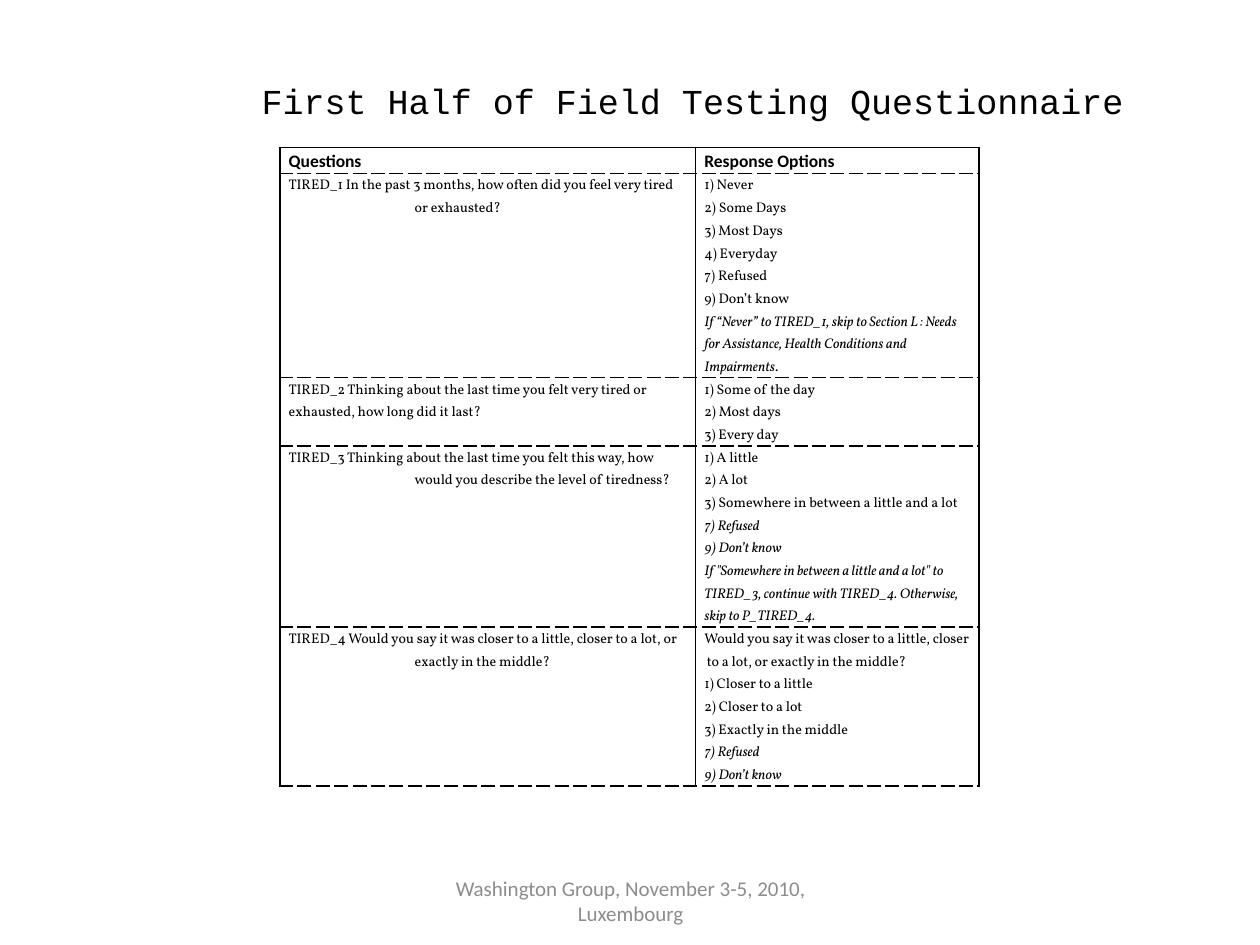
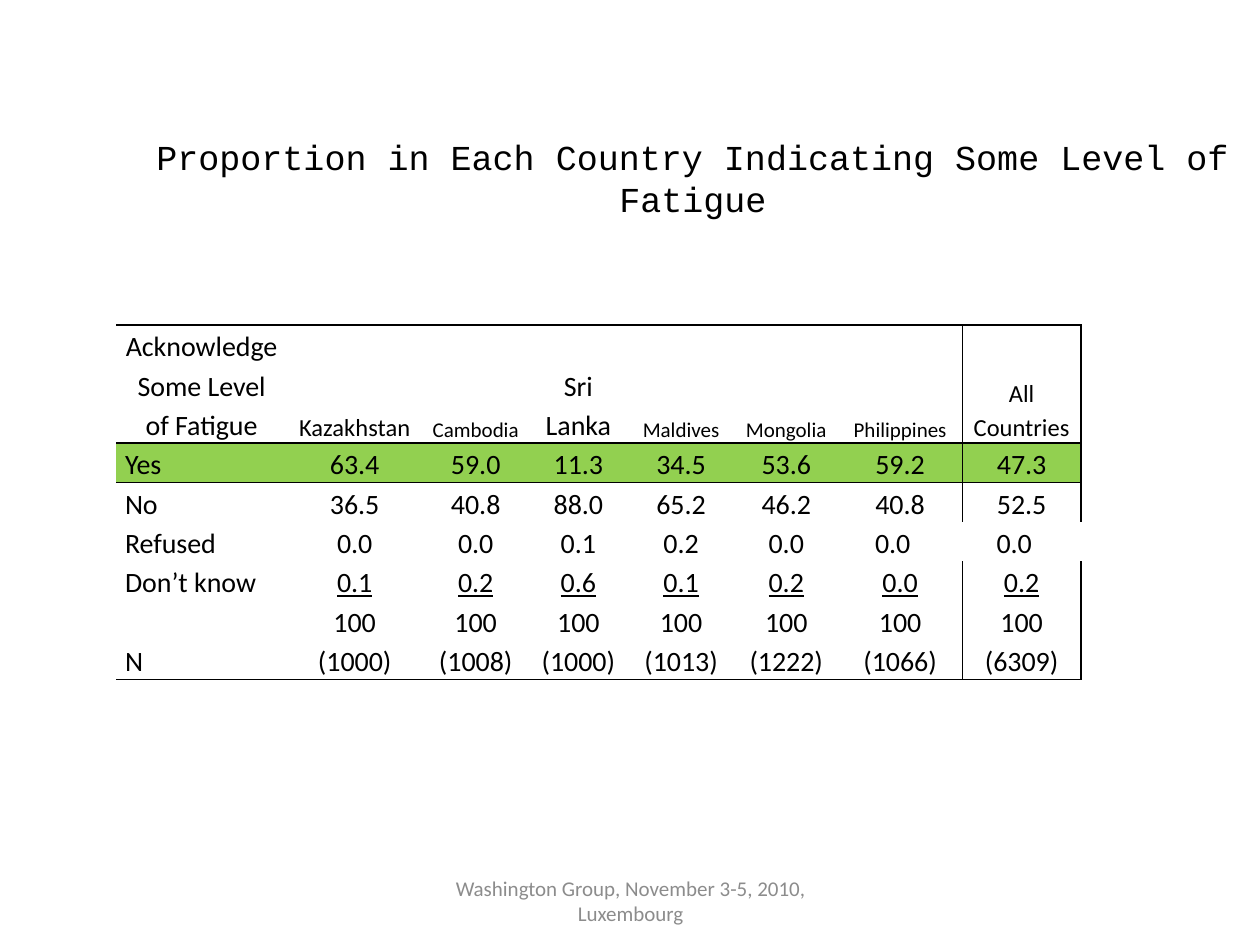
"""Build two slides on the fatigue questions: the questionnaire and the results by country."""
from lxml import etree
from pptx import Presentation
from pptx.dml.color import RGBColor
from pptx.enum.text import MSO_ANCHOR, MSO_AUTO_SIZE, PP_ALIGN
from pptx.oxml.ns import qn
from pptx.util import Cm, Pt

TOP, MIDDLE, BOTTOM = MSO_ANCHOR.TOP, MSO_ANCHOR.MIDDLE, MSO_ANCHOR.BOTTOM
LEFT, CENTER = PP_ALIGN.LEFT, PP_ALIGN.CENTER
NO_AUTOFIT = MSO_AUTO_SIZE.NONE

BLACK, GREY, GREEN = "000000", "8C8C8C", "92D050"
BODY_FONT, TITLE_FONT, QUESTION_FONT = "Calibri", "Courier New", "Vollkorn"
PLAIN_TABLE_STYLE = "{2D5ABB26-0587-4C30-8999-92F81FD0307C}"
FOOTER = "Washington Group, November 3-5, 2010, Luxembourg"


def add_table_slide(heading, heading_top, heading_inset, left, top, widths, heights):
    slide = prs.slides.add_slide(prs.slide_layouts[5])
    title = slide.shapes.title
    title.left, title.top, title.width, title.height = Cm(2.54), Cm(heading_top), Cm(22.86), Cm(3.18)
    footer = slide.shapes.add_textbox(Cm(8.69), Cm(17.65), Cm(8.05), Cm(1.02))
    for box, text, font_name, size, colour, anchor in (
        (title, heading, TITLE_FONT, 20, BLACK, TOP),
        (footer, FOOTER, BODY_FONT, 12, GREY, MIDDLE),
    ):
        frame = box.text_frame
        frame.text = text
        frame.word_wrap = True
        frame.auto_size = NO_AUTOFIT
        frame.vertical_anchor = anchor
        paragraph = frame.paragraphs[0]
        paragraph.alignment = CENTER
        paragraph.font.name, paragraph.font.size = font_name, Pt(size)
        paragraph.font.color.rgb = RGBColor.from_string(colour)
    title.text_frame.margin_top = Cm(heading_inset)

    graphic = slide.shapes.add_table(len(heights), len(widths), Cm(left), Cm(top),
                                     Cm(sum(widths)), Cm(sum(heights)))
    table = graphic.table
    table.first_row = table.horz_banding = False
    next(graphic.element.iter(qn("a:tableStyleId"))).text = PLAIN_TABLE_STYLE
    for column, width in zip(table.columns, widths):
        column.width = Cm(width)
    for row, height in zip(table.rows, heights):
        row.height = Cm(height)
    return table


def format_cell(cell, borders, dashed="", fill=None, anchor=TOP):
    cell.margin_left = cell.margin_right = Cm(0.18)
    cell.margin_top = cell.margin_bottom = 0
    cell.vertical_anchor = anchor
    properties = cell._tc.get_or_add_tcPr()
    for side in "LRTB":
        if side in borders:
            line = etree.SubElement(properties, qn(f"a:ln{side}"), w=str(Pt(1)))
            solid = etree.SubElement(line, qn("a:solidFill"))
            etree.SubElement(solid, qn("a:srgbClr"), val=BLACK)
            etree.SubElement(line, qn("a:prstDash"), val="dash" if side in dashed else "solid")
    if fill:
        cell.fill.solid()
        cell.fill.fore_color.rgb = RGBColor.from_string(fill)
    else:
        cell.fill.background()


prs = Presentation()
prs.slide_width, prs.slide_height = Cm(25.4), Cm(19.05)

questionnaire = [
    ("TIRED_1 In the past 3 months, how often did you feel very tired or exhausted?",
     ["1) Never", "2) Some Days", "3) Most Days", "4) Everyday", "7) Refused", "9) Don’t know"],
     ["If “Never” to TIRED_1, skip to Section L : Needs for Assistance, "
      "Health Conditions and Impairments"]),
    ("TIRED_2 Thinking about the last time you felt very tired or exhausted, "
     "how long did it last?",
     ["1) Some of the day", "2) Most days", "3) Every day"], []),
    ("TIRED_3 Thinking about the last time you felt this way, "
     "how would you describe the level of tiredness?",
     ["1) A little", "2) A lot", "3) Somewhere in between a little and a lot"],
     ["7) Refused", "9) Don’t know",
      'If "Somewhere in between a little and a lot" to TIRED_3, continue with TIRED_4. '
      "Otherwise, skip to P_TIRED_4."]),
    ("TIRED_4 Would you say it was closer to a little, closer to a lot, "
     "or exactly in the middle?",
     ["Would you say it was closer to a little, closer to a lot, or exactly in the middle?",
      "1) Closer to a little", "2) Closer to a lot", "3) Exactly in the middle"],
     ["7) Refused", "9) Don’t know"]),
]
questions = add_table_slide("First Half of Field Testing Questionnaire", 1.27, 0.33,
                            5.64, 2.97, [8.38, 5.72], [0.53, 3.89, 1.3, 3.45, 3.02])
rows = [("Questions", ["Response Options"], [])] + questionnaire
for r, (question, answers, italics) in enumerate(rows):
    is_header = r == 0
    for c, lines in enumerate(([question], answers + italics)):
        cell = questions.cell(r, c)
        format_cell(cell, "LRTB", dashed="B" if is_header else "TB")
        cell.text = "\n".join(lines)
        for i, paragraph in enumerate(cell.text_frame.paragraphs):
            hanging = 0
            if c == 0 and r in (1, 3, 4):
                hanging = Cm(2.54)
            elif lines[i].startswith("Would"):
                hanging = Cm(0.05)
            if hanging:
                indents = paragraph._p.get_or_add_pPr()
                indents.set("marL", str(hanging))
                indents.set("indent", str(-hanging))
            paragraph.line_spacing = 1.15
            font = paragraph.font
            font.name = BODY_FONT if is_header else QUESTION_FONT
            font.size = Pt(10 if is_header else 8)
            font.bold = is_header
            font.italic = c == 1 and i >= len(answers)
            font.color.rgb = RGBColor.from_string(BLACK)
full_stop = questions.cell(1, 1).text_frame.paragraphs[-1].add_run()
full_stop.text = "."
full_stop.font.italic = False

fatigue = [
    ["Acknowledge Some Level of Fatigue", "Kazakhstan", "Cambodia", "Sri Lanka",
     "Maldives", "Mongolia", "Philippines", "All Countries"],
    ["Yes", "63.4", "59.0", "11.3", "34.5", "53.6", "59.2", "47.3"],
    ["No", "36.5", "40.8", "88.0", "65.2", "46.2", "40.8", "52.5"],
    ["Refused", "0.0", "0.0", "0.1", "0.2", "0.0", "0.0", "0.0"],
    ["Don’t know", "0.1", "0.2", "0.6", "0.1", "0.2", "0.0", "0.2"],
    ["", "100", "100", "100", "100", "100", "100", "100"],
    ["N", "(1000)", "(1008)", "(1000)", "(1013)", "(1222)", "(1066)", "(6309)"],
]
header_sizes = [16, 14, 12, 16, 12, 12, 12, 14]
REFUSED, DONT_KNOW, LAST = 3, 4, len(fatigue) - 1
results = add_table_slide("Proportion in Each Country Indicating Some Level of Fatigue", 2.74, 0,
                          2.34, 6.55, [3.45, 2.72, 2.16, 1.98, 2.16, 2.08, 2.21, 0.3, 2.39],
                          [1.45] + [0.51] * LAST)
for r, values in enumerate(fatigue):
    merge_start = 7 if r == REFUSED else 6
    results.cell(r, merge_start).merge(results.cell(r, merge_start + 1))
    for c in range(9):
        borders = {0: "TB", 1: "T", LAST: "B"}.get(r, "")
        if r != REFUSED:
            borders += {6: "R", 7: "R", 8: "L"}.get(c, "")
        format_cell(results.cell(r, c), borders, fill=GREEN if r == 1 else None,
                    anchor=BOTTOM if r == 0 else TOP)
    value_columns = [*range(7), 7 if r == REFUSED else 8]
    for i, (c, value) in enumerate(zip(value_columns, values)):
        if not value:
            continue
        cell = results.cell(r, c)
        cell.text = value
        paragraph = cell.text_frame.paragraphs[0]
        paragraph.alignment = LEFT if c == 0 and r else CENTER
        paragraph.line_spacing = 1.15
        paragraph.space_after = Pt(10)
        font = paragraph.font
        font.name = BODY_FONT
        font.size = Pt(16 if r else header_sizes[i])
        font.underline = r == DONT_KNOW and c > 0
        font.color.rgb = RGBColor.from_string(BLACK)

prs.save("out.pptx")
